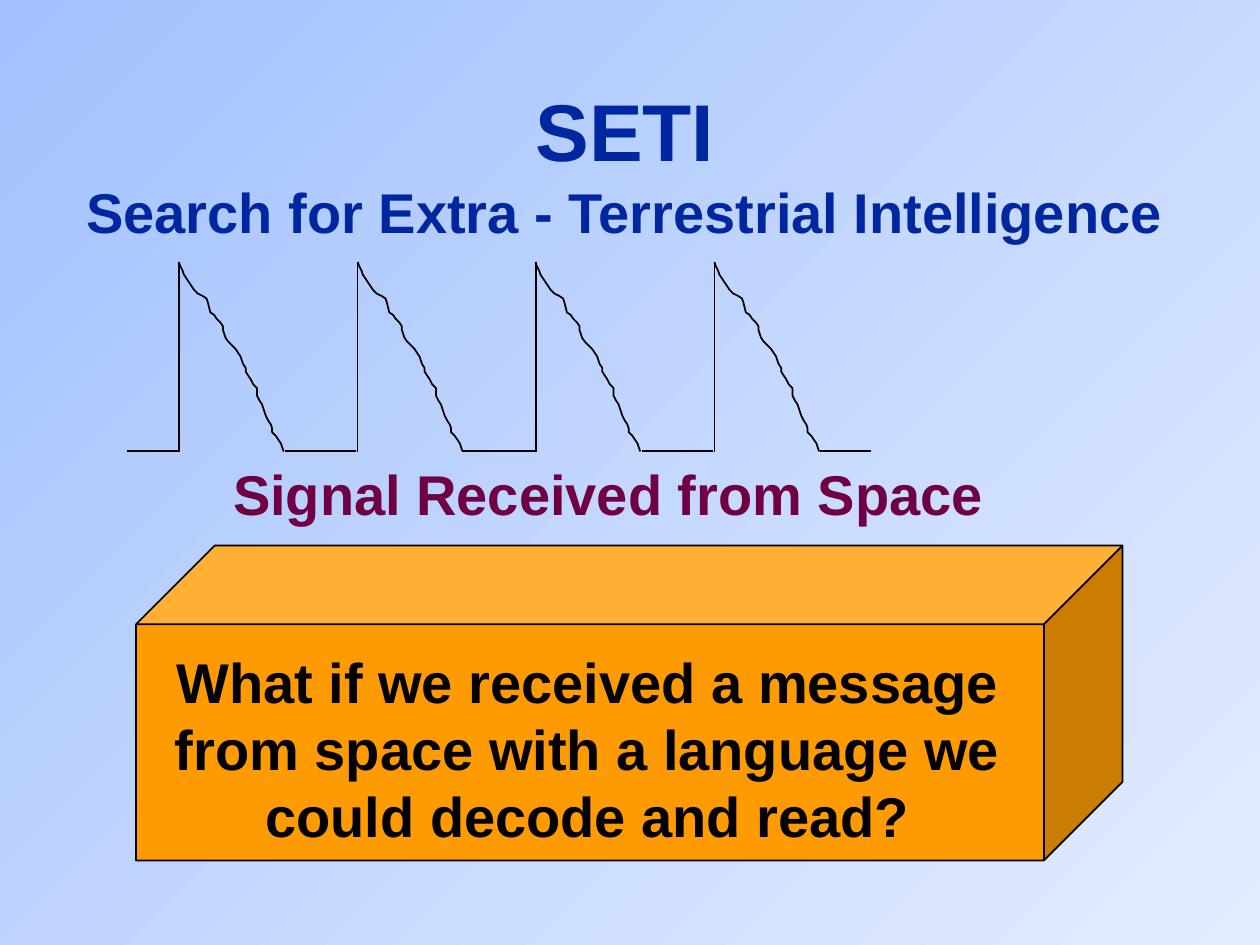
"""Build the SETI slide: a repeating signal above a question on a block."""
from lxml import etree
from pptx import Presentation
from pptx.dml.color import RGBColor
from pptx.enum import shapes, text
from pptx.oxml import ns
from pptx.util import Inches, Pt

SKY_DEEP = RGBColor(0xA2, 0xC1, 0xFE)
SKY_PALE = RGBColor(0xE3, 0xEC, 0xFF)
NAVY = RGBColor(0x00, 0x27, 0x9F)
PLUM = RGBColor(0x6E, 0x00, 0x43)
ORANGE = RGBColor(0xFE, 0x9B, 0x03)
BLACK = RGBColor(0x00, 0x00, 0x00)

HEADING = [("SETI", 46), ("Search for Extra - Terrestrial Intelligence", 32)]
CAPTION = [("Signal Received from Space", 32)]
QUESTION = [("What if we received a message from space with a language "
             "we could decode and read?", 32)]

PULSE_COUNT = 4
FIRST_PULSE, PULSE_PITCH = 1.42, 1.4167
PEAK, BASELINE = 2.08, 3.58
DECAY = [
    (0, 0), (1, 3), (3, 7), (4, 10), (6, 13), (8, 16), (10, 19), (12, 22),
    (15, 25), (19, 27), (22, 29), (23, 32), (24, 36), (25, 40), (28, 42),
    (30, 45), (33, 48), (35, 51), (35, 54), (36, 57), (37, 60), (39, 63),
    (42, 66), (45, 69), (47, 72), (49, 75), (50, 78), (51, 81), (53, 84),
    (53, 87), (55, 90), (57, 93), (59, 97), (62, 100), (62, 103), (62, 106),
    (64, 110), (66, 113), (67, 116), (68, 119), (69, 122), (71, 126),
    (73, 129), (74, 132), (74, 135), (77, 138), (79, 141), (81, 144),
    (82, 147), (83, 150), (82, 147),
]


def add_text(slide, lines, left, top, width, height, color=BLACK,
             anchor=text.MSO_ANCHOR.MIDDLE):
    """Add centred bold lines, given as (wording, size) pairs."""
    frame = slide.shapes.add_textbox(
        Inches(left), Inches(top), Inches(width), Inches(height)).text_frame
    frame.word_wrap = True
    frame.vertical_anchor = anchor
    paragraph = frame.paragraphs[0]
    paragraph.alignment = text.PP_ALIGN.CENTER
    for index, (wording, size) in enumerate(lines):
        if index:
            paragraph.add_line_break()
        run = paragraph.add_run()
        run.text = wording
        run.font.name = "Arial"
        run.font.size = Pt(size)
        run.font.bold = True
        run.font.color.rgb = color


def outline(part):
    """Give a part its thin black line."""
    part.line.color.rgb = BLACK
    part.line.width = Pt(1)


def add_line(signal, x1, y1, x2, y2):
    """Add one straight stretch of the signal."""
    stretch = signal.shapes.add_connector(
        shapes.MSO_CONNECTOR.STRAIGHT,
        Inches(x1), Inches(y1), Inches(x2), Inches(y2))
    outline(stretch)
    etree.SubElement(stretch._element.spPr, ns.qn("a:effectLst"))


def add_pulse(signal, x):
    """Add a lead-in, a sharp rise, a ragged decay and a tail."""
    add_line(signal, x - 0.41, BASELINE, x - 0.01, BASELINE)
    add_line(signal, x, BASELINE + 0.01, x, PEAK)
    points = [(round(x * 100) + dx, round(PEAK * 100) + dy) for dx, dy in DECAY]
    builder = signal.shapes.build_freeform(*points[0], scale=Inches(0.01))
    builder.add_line_segments(points[1:], close=False)
    decay = builder.convert_to_shape()
    decay.fill.background()
    decay.shadow.inherit = False
    outline(decay)
    add_line(signal, x + 0.84, BASELINE, x + 1.24, BASELINE)


def main():
    """Assemble and save the slide."""
    deck = Presentation()
    deck.slide_width, deck.slide_height = Inches(10), Inches(7.5)
    slide = deck.slides.add_slide(deck.slide_layouts[6])

    sky = slide.background.fill
    sky.gradient()
    sky.gradient_angle = 315
    for stop, color, position in zip(sky.gradient_stops, (SKY_DEEP, SKY_PALE), (0, 1)):
        stop.color.rgb = color
        stop.position = position

    add_text(slide, CAPTION, 0.58, 3.58, 8.5, 0.67, color=PLUM)

    signal = slide.shapes.add_group_shape()
    for index in range(PULSE_COUNT):
        add_pulse(signal, FIRST_PULSE + index * PULSE_PITCH)

    add_text(slide, HEADING, 0.42, 0.67, 9.08, 1.25, color=NAVY)

    block = slide.shapes.add_shape(
        shapes.MSO_SHAPE.CUBE, Inches(1.08), Inches(4.33), Inches(7.83), Inches(2.5))
    block.adjustments[0] = 0.25
    block.fill.solid()
    block.fill.fore_color.rgb = ORANGE
    block.shadow.inherit = False
    outline(block)

    add_text(slide, QUESTION, 1.08, 5.09, 7.17, 1.71, anchor=text.MSO_ANCHOR.TOP)
    deck.save("out.pptx")


if __name__ == "__main__":
    main()
